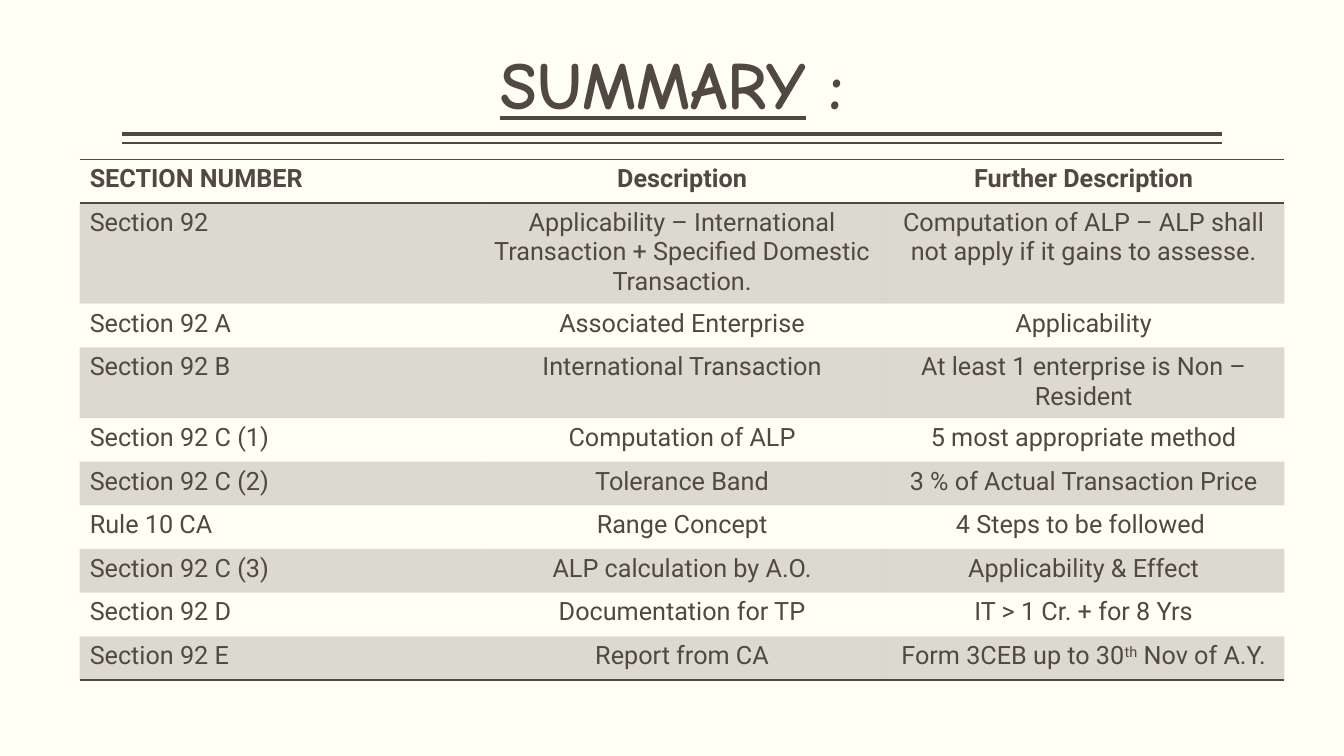
from dataclasses import dataclass
from lxml import etree
from pptx import Presentation
from pptx import util as u
from pptx.dml.color import RGBColor
from pptx.enum import text
from pptx.oxml import ns


@dataclass
class Theme:
    ink: str = "514843"
    paper: str = "FFFFF3"
    head: str = "Comic Neue"
    body: str = "Roboto"
    big: int = 48
    small: int = 18
    shade: int = 20
    plain: str = "{2D5ABB26-0587-4C30-8999-92F81FD0307C}"


T = Theme()
WIDE, HIGH = u.Inches(13.33), u.Inches(7.5)
LEFT, RIGHT = u.Inches(1.21), u.Inches(12.12)
ROW = u.Cm(1.1)
TALL = {1: u.Cm(2.45), 3: u.Cm(1.73)}
ROWS = [
    ("SECTION NUMBER", "Description", "Further Description"),
    ("Section 92",
     "Applicability – International Transaction + Specified Domestic Transaction.",
     "Computation of ALP – ALP shall not apply if it gains to assesse."),
    ("Section 92 A", "Associated Enterprise", "Applicability"),
    ("Section 92 B", "International Transaction",
     "At least 1 enterprise is Non – Resident"),
    ("Section 92 C (1)", "Computation of ALP", "5 most appropriate method"),
    ("Section 92 C (2)", "Tolerance Band", "3 % of Actual Transaction Price"),
    ("Rule 10 CA", "Range Concept", "4 Steps to be followed "),
    ("Section 92 C (3)", "ALP calculation by A.O.", "Applicability & Effect"),
    ("Section 92 D", "Documentation for TP", "IT > 1 Cr. + for 8 Yrs"),
    ("Section 92 E", "Report from CA",
     ("Form 3CEB up to 30", "th", " Nov of A.Y.")),
]


def put(item, **vals):
    for key, val in vals.items():
        setattr(item, key, val)


def add(node, tag, **vals):
    return etree.SubElement(node, ns.qn(tag), vals)


def write(para, words, **vals):
    run = para.add_run()
    run.text = words
    run.font.color.rgb = RGBColor.from_string(T.ink)
    put(run.font, **vals)
    return run


def rule(slide, top, width):
    line = slide.shapes.add_connector(1, LEFT, top, RIGHT, top)
    line.line.color.rgb = RGBColor.from_string(T.ink)
    line.line.width = u.Pt(width)
    add(line._element.spPr, "a:effectLst")


def title(slide):
    box = slide.shapes.add_textbox(
        LEFT, u.Inches(0.08), RIGHT - LEFT, u.Inches(1.2))
    frame = box.text_frame
    put(frame, word_wrap=True, margin_left=0, margin_right=0,
        vertical_anchor=text.MSO_ANCHOR.BOTTOM)
    para = frame.paragraphs[0]
    put(para, alignment=text.PP_ALIGN.CENTER, line_spacing=0.9)
    for words, under in ((" ", False), ("SUMMARY", True), (" : ", False)):
        write(para, words, name=T.head, size=u.Pt(T.big), bold=True,
              underline=under)


def edge(cell, side):
    line = add(cell._tc.get_or_add_tcPr(), "a:" + side, w=str(u.Pt(1)))
    add(add(line, "a:solidFill"), "a:srgbClr", val=T.ink)


def tint(cell):
    cell.fill.solid()
    cell.fill.fore_color.rgb = RGBColor.from_string(T.ink)
    tone = cell._tc.tcPr.find(ns.qn("a:solidFill"))[0]
    add(tone, "a:alpha", val=str(T.shade * 1000))


def fill(cell, row, col, words):
    para = cell.text_frame.paragraphs[0]
    para.alignment = text.PP_ALIGN.CENTER if col else text.PP_ALIGN.LEFT
    parts = (words,) if isinstance(words, str) else words
    for spot, part in enumerate(parts):
        run = write(para, part, name=T.body, size=u.Pt(T.small),
                    bold=row == 0)
        if spot == 1:
            run.font._element.set("baseline", "30000")
    if row == 0:
        edge(cell, "lnT")
    if row in (0, len(ROWS) - 1):
        edge(cell, "lnB")
    if row % 2:
        tint(cell)
    else:
        cell.fill.background()


def grid(slide):
    tall = [TALL.get(row, ROW) for row in range(len(ROWS))]
    table = slide.shapes.add_table(
        len(ROWS), len(ROWS[0]), u.Inches(0.79), u.Inches(1.58),
        u.Inches(11.95), sum(tall)).table
    put(table, first_row=False, horz_banding=False)
    table._tbl.tblPr.find(ns.qn("a:tableStyleId")).text = T.plain
    for row, cells in enumerate(ROWS):
        table.rows[row].height = tall[row]
        for col, words in enumerate(cells):
            fill(table.cell(row, col), row, col, words)


def main():
    deck = Presentation()
    put(deck, slide_width=WIDE, slide_height=HIGH)
    slide = deck.slides.add_slide(deck.slide_layouts[6])
    back = slide.background.fill
    back.solid()
    back.fore_color.rgb = RGBColor.from_string(T.paper)
    for top, width in ((1.33, 3), (1.42, 1)):
        rule(slide, u.Inches(top), width)
    title(slide)
    grid(slide)
    deck.save("out.pptx")


if __name__ == "__main__":
    main()
